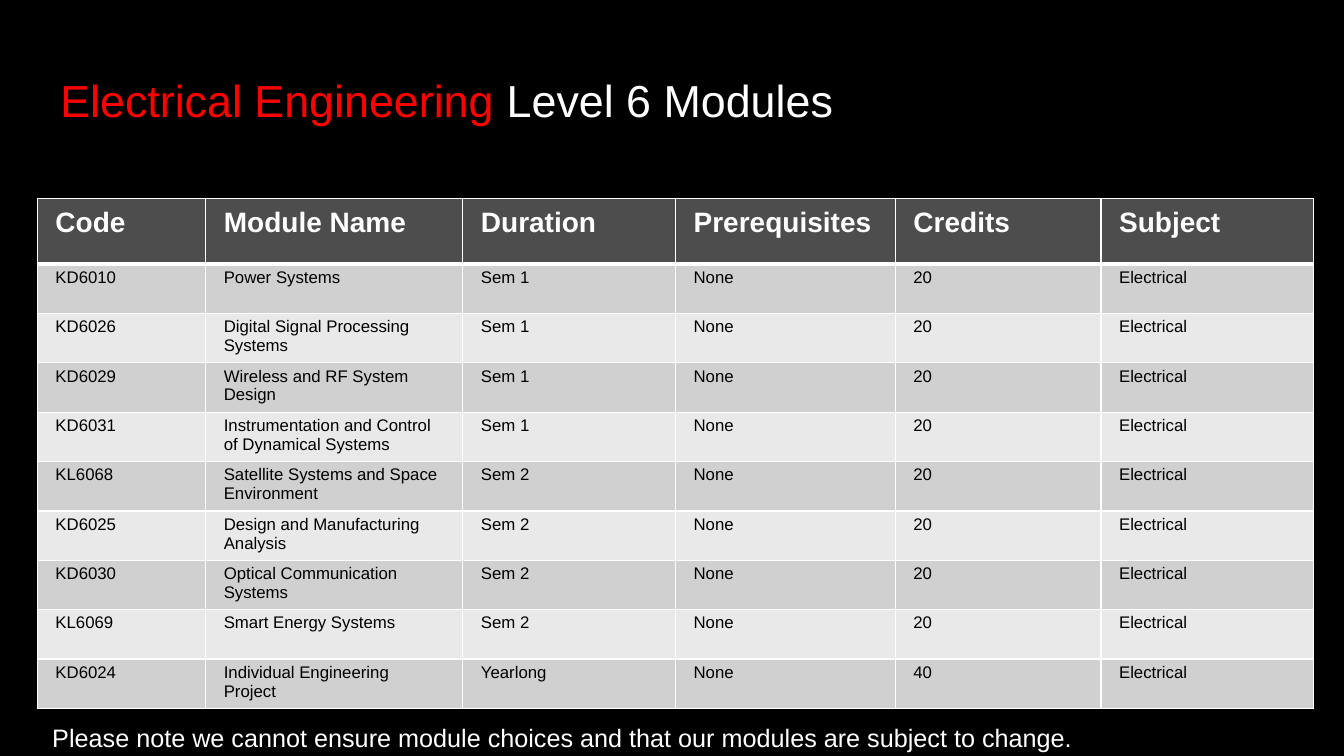
from lxml.etree import SubElement
from pptx import Presentation
from pptx.dml.color import RGBColor
from pptx.enum.text import MSO_ANCHOR as Anchor, MSO_AUTO_SIZE as AutoSize
from pptx.oxml.ns import qn
from pptx.util import Inches, Pt

BLACK = RGBColor(0x00, 0x00, 0x00)
WHITE = RGBColor(0xFF, 0xFF, 0xFF)
RED = RGBColor(0xFF, 0x00, 0x00)
HEADER_GREY = RGBColor(0x4D, 0x4D, 0x4D)
BAND_GREYS = (RGBColor(0xD0, 0xD0, 0xD0), RGBColor(0xE9, 0xE9, 0xE9))

TITLE = (("Electrical Engineering", RED), (" Level 6 Modules", WHITE))
NOTE = (("Please note we cannot ensure module choices and that our modules "
         "are subject to change.", WHITE),)
HEADINGS = ("Code", "Module Name", "Duration", "Prerequisites", "Credits", "Subject")
PREREQUISITES, SUBJECT = "None", "Electrical"
MODULES = (
    ("KD6010", "Power Systems", "Sem 1", 20),
    ("KD6026", "Digital Signal Processing Systems", "Sem 1", 20),
    ("KD6029", "Wireless and RF System Design", "Sem 1", 20),
    ("KD6031", "Instrumentation and Control of Dynamical Systems", "Sem 1", 20),
    ("KL6068", "Satellite Systems and Space Environment", "Sem 2", 20),
    ("KD6025", "Design and Manufacturing Analysis", "Sem 2", 20),
    ("KD6030", "Optical Communication Systems", "Sem 2", 20),
    ("KL6069", "Smart Energy Systems", "Sem 2", 20),
    ("KD6024", "Individual Engineering Project", "Yearlong", 40),
)

SLIDE_SIZE = (13.33, 7.5)
TITLE_BOX = (0.5, 0.4, 10.15, 1.25)
NOTE_BOX = (0.42, 7.12, 12.23, 0.4)
TABLE_LEFT, TABLE_TOP = 0.37, 1.97
COLUMN_WIDTHS = (1.67, 2.55, 2.11, 2.18, 2.04, 2.11)
HEADER_HEIGHT, MODULE_HEIGHT = 0.65, 0.49
SIDE_MARGIN, HEADER_MARGIN, MODULE_MARGIN = 0.18, 0.09, 0.04
THIN, THICK = Pt(1), Pt(3)

HEADER_FONT = {"name": "Arial", "size": Pt(20), "bold": True}
MODULE_FONT = {"name": "Arial", "size": Pt(12), "bold": False}
TITLE_FONT = {"name": "Arial", "size": Pt(32)}
NOTE_FONT = {"name": "Arial", "size": Pt(18)}


def set_format(target, values):
    for attribute, value in values.items():
        setattr(target, attribute, value)


def add_runs(paragraph, pieces, font_format):
    for text, colour in pieces:
        run = paragraph.add_run()
        run.text = text
        set_format(run.font, font_format)
        run.font.color.rgb = colour


def add_text(slide, box, pieces, font_format, frame_format, line_spacing=1.0):
    frame = slide.shapes.add_textbox(*map(Inches, box)).text_frame
    set_format(frame, {"word_wrap": True, **frame_format})
    frame.paragraphs[0].line_spacing = line_spacing
    add_runs(frame.paragraphs[0], pieces, font_format)


def add_borders(cell, top, bottom):
    properties = cell._tc.get_or_add_tcPr()
    for side, width in (("L", THIN), ("R", THIN), ("T", top), ("B", bottom)):
        line = SubElement(properties, qn(f"a:ln{side}"), w=str(width))
        fill = SubElement(line, qn("a:solidFill"))
        SubElement(fill, qn("a:srgbClr"), val=str(WHITE))


def style_cell(cell, text, row):
    is_header = row == 0
    margin = Inches(HEADER_MARGIN if is_header else MODULE_MARGIN)
    set_format(cell, {
        "margin_left": Inches(SIDE_MARGIN), "margin_right": Inches(SIDE_MARGIN),
        "margin_top": margin, "margin_bottom": margin,
    })
    add_borders(cell, THICK if row == 1 else THIN, THICK if is_header else THIN)
    cell.fill.solid()
    cell.fill.fore_color.rgb = HEADER_GREY if is_header else BAND_GREYS[(row - 1) % 2]
    add_runs(cell.text_frame.paragraphs[0], [(text, WHITE if is_header else BLACK)],
             HEADER_FONT if is_header else MODULE_FONT)


def add_module_table(slide):
    rows = [HEADINGS] + [
        (code, name, duration, PREREQUISITES, str(module_credits), SUBJECT)
        for code, name, duration, module_credits in MODULES
    ]
    heights = [HEADER_HEIGHT] + [MODULE_HEIGHT] * len(MODULES)
    box = (TABLE_LEFT, TABLE_TOP, sum(COLUMN_WIDTHS), sum(heights))
    table = slide.shapes.add_table(len(rows), len(HEADINGS), *map(Inches, box)).table
    for column, width in zip(table.columns, COLUMN_WIDTHS):
        column.width = Inches(width)
    for row, (texts, height) in enumerate(zip(rows, heights)):
        table.rows[row].height = Inches(height)
        for column, text in enumerate(texts):
            style_cell(table.cell(row, column), text, row)


def main():
    deck = Presentation()
    deck.slide_width, deck.slide_height = map(Inches, SLIDE_SIZE)
    slide = deck.slides.add_slide(deck.slide_layouts[6])
    slide.background.fill.solid()
    slide.background.fill.fore_color.rgb = BLACK
    add_module_table(slide)
    add_text(slide, TITLE_BOX, TITLE, TITLE_FONT, {"vertical_anchor": Anchor.MIDDLE}, 0.9)
    add_text(slide, NOTE_BOX, NOTE, NOTE_FONT, {"auto_size": AutoSize.SHAPE_TO_FIT_TEXT})
    deck.save("out.pptx")


if __name__ == "__main__":
    main()
